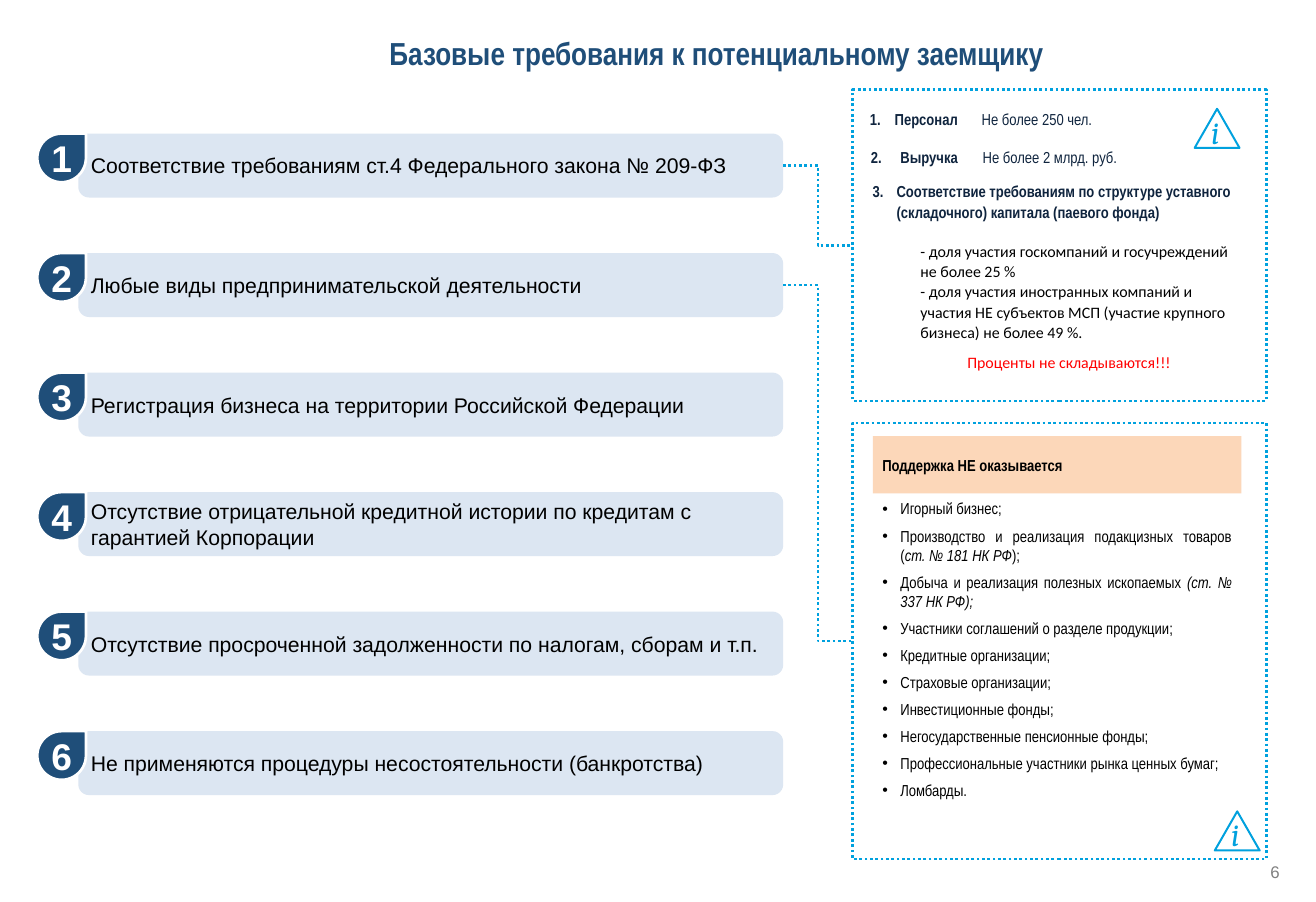
import pptx
import pptx.dml.color
import pptx.enum.dml
import pptx.enum.shapes
import pptx.enum.text
import pptx.util
import lxml.etree
from dataclasses import dataclass

KIND = pptx.enum.shapes.MSO_SHAPE
ALIGN = pptx.enum.text.PP_ALIGN
ANCHOR = pptx.enum.text.MSO_ANCHOR
NS = "{http://schemas.openxmlformats.org/drawingml/2006/main}"


@dataclass(frozen=True)
class Theme:
    navy: str = "1F4E79"
    dark: str = "0F243E"
    black: str = "000000"
    white: str = "FFFFFF"
    gray: str = "808080"
    red: str = "FF0000"
    cyan: str = "00A1DE"
    pale: str = "DCE6F2"
    peach: str = "FCD7B9"
    plain: str = "Arial"
    thin: str = "Arial Narrow"
    soft: str = "Calibri"
    serif: str = "Cambria"
    small: float = 12
    page: float = 12.7
    body: float = 16
    large: float = 24
    digit: float = 28


THEME = Theme()
WIDE, HIGH = pptx.util.Inches(13.78), pptx.util.Inches(9.45)

DEMANDS = [
    "Соответствие требованиям ст.4 Федерального закона № 209-ФЗ",
    "Любые виды предпринимательской деятельности",
    "Регистрация бизнеса на территории Российской Федерации",
    "Отсутствие отрицательной кредитной истории по кредитам с гарантией Корпорации",
    "Отсутствие просроченной задолженности по налогам, сборам и т.п.",
    "Не применяются процедуры несостоятельности (банкротства)",
]
LIMITS = [
    ("Персонал", "Не более 250 чел.", 65.38, 10.85, 0.26),
    ("Выручка", "Не более 2 млрд. руб.", 65.46, 15.13, 0.31),
]
SHARES = [
    "- доля участия госкомпаний и госучреждений не более 25 %",
    "- доля участия иностранных компаний и участия НЕ субъектов МСП "
    "(участие крупного бизнеса) не более 49 %.",
]
BANNED = [
    "Игорный бизнес;",
    "Производство и реализация подакцизных товаров (*ст. № 181 НК РФ*);",
    "Добыча и реализация полезных ископаемых *(ст. № 337 НК РФ);*",
    "Участники соглашений о разделе продукции;",
    "Кредитные организации;",
    "Страховые организации;",
    "Инвестиционные фонды;",
    "Негосударственные пенсионные фонды;",
    "Профессиональные участники рынка ценных бумаг;",
    "Ломбарды.",
]


def area(left, top, width, height):
    """Turn cells of a 100 by 100 grid over the slide into lengths."""
    return [int(cell * full / 100) for cell, full in
            zip((left, top, width, height), (WIDE, HIGH, WIDE, HIGH))]


def tint(name):
    return pptx.dml.color.RGBColor.from_string(name)


def stroke(line, color, width, dotted=False):
    line.color.rgb = tint(color)
    line.width = pptx.util.Pt(width)
    if dotted:
        line.dash_style = pptx.enum.dml.MSO_LINE.ROUND_DOT


def write(box, text, size=THEME.small, font=THEME.thin, color=THEME.black,
          bold=False, slant=False, align=ALIGN.LEFT, mark=None, indent=0,
          hang=0, before=0, after=0, pitch=None):
    """Add a paragraph; parts between asterisks are italic.

    A mark is a bullet sign, or the number a numbered list starts at.
    """
    frame = box.text_frame
    para = frame.paragraphs[0]
    if para.runs:
        para = frame.add_paragraph()
    props = para._p.get_or_add_pPr()
    props.set("marL", str(pptx.util.Inches(indent)))
    props.set("indent", str(-pptx.util.Inches(hang)))
    if isinstance(mark, int):
        lxml.etree.SubElement(props, NS + "buAutoNum", type="arabicPeriod",
                              startAt=str(mark))
    elif mark:
        lxml.etree.SubElement(props, NS + "buFont", typeface=THEME.plain)
        lxml.etree.SubElement(props, NS + "buChar", char=mark)
    para.alignment = align
    para.space_before = pptx.util.Pt(before)
    para.space_after = pptx.util.Pt(after)
    if pitch:
        para.line_spacing = pitch
    for spot, part in enumerate(text.split("*")):
        if part:
            run = para.add_run()
            run.text = part
            run.font.size = pptx.util.Pt(size)
            run.font.name = font
            run.font.bold = bold
            run.font.italic = slant or spot % 2 == 1
            run.font.color.rgb = tint(color)


def frame(box, anchor, inset=True, wrap=True):
    body = box.text_frame
    body.word_wrap = wrap
    body.vertical_anchor = anchor
    if not inset:
        body.margin_left = body.margin_right = 0
        body.margin_top = body.margin_bottom = 0


def label(slide, place, anchor=ANCHOR.MIDDLE, inset=True, wrap=True):
    box = slide.shapes.add_textbox(*area(*place))
    frame(box, anchor, inset, wrap)
    return box


def block(slide, kind, place, fill=None, edge=None, width=2, dotted=False,
          inset=True):
    box = slide.shapes.add_shape(kind, *area(*place))
    box.shadow.inherit = False
    if fill:
        box.fill.solid()
        box.fill.fore_color.rgb = tint(fill)
    else:
        box.fill.background()
    if edge:
        stroke(box.line, edge, width, dotted)
    else:
        box.line.fill.background()
    frame(box, ANCHOR.MIDDLE, inset)
    return box


def panel(slide, top, height):
    return block(slide, KIND.RECTANGLE, (64.8, top, 31.42, height),
                 edge=THEME.cyan, dotted=True)


def demand(slide, index, text):
    top = 14.81 + 13.25 * index
    bar = block(slide, KIND.ROUNDED_RECTANGLE, (5.95, top, 53.56, 7.09), THEME.pale)
    write(bar, text, THEME.body, THEME.plain)
    drop = block(slide, KIND.TEAR, (2.83, top, 3.7, 5.4), THEME.navy,
                 THEME.white, inset=False)
    write(drop, str(index + 1), THEME.digit, THEME.plain, THEME.white,
          bold=True, align=ALIGN.CENTER)
    return bar


def link(slide, start, end):
    """Join the right side of start to the left side of end."""
    line = slide.shapes.add_connector(
        pptx.enum.shapes.MSO_CONNECTOR.ELBOW, 0, 0, 0, 0)
    line.begin_connect(start, 3)
    line.end_connect(end, 1)
    stroke(line.line, THEME.cyan, 2, True)
    lxml.etree.SubElement(line._element.spPr, NS + "effectLst")


def info(slide, left, top):
    block(slide, KIND.ISOSCELES_TRIANGLE, (left, top, 3.41, 4.34),
          THEME.white, THEME.cyan, 1.5)
    sign = label(slide, (left + 0.51, top - 0.11, 2.1, 5.29), ANCHOR.TOP, wrap=False)
    write(sign, "i", THEME.large, THEME.serif, THEME.cyan, slant=True,
          align=ALIGN.CENTER)


def limits(slide):
    for row, (name, value, left, top, hang) in enumerate(LIMITS):
        write(label(slide, (left, top, 14.95, 4.66)), name, color=THEME.dark,
              bold=True, mark=row + 1, indent=hang, hang=hang)
        write(label(slide, (left + 8.5, top, 11.97, 4.66)), value, color=THEME.dark)
    box = label(slide, (65.6, 19.37, 29.9, 22), ANCHOR.TOP)
    write(box, "Соответствие требованиям по структуре уставного "
          "(складочного) капитала (паевого фонда)", color=THEME.dark,
          bold=True, mark=3, indent=0.25, hang=0.25, after=14, pitch=1.1)
    for row, text in enumerate(SHARES):
        write(box, text, font=THEME.soft, indent=0.5, after=8 * row, pitch=1.07)
    write(box, "Проценты не складываются!!!", font=THEME.soft,
          color=THEME.red, indent=0.99)


def banned(slide):
    head = block(slide, KIND.RECTANGLE, (66.33, 48.36, 28.01, 6.35), THEME.peach)
    write(head, "Поддержка НЕ оказывается", bold=True)
    box = label(slide, (66.33, 54.81, 28.01, 34.71), ANCHOR.TOP)
    for row, text in enumerate(BANNED):
        write(box, text, align=ALIGN.JUSTIFY, mark="•", indent=0.19,
              hang=0.19, before=6 if row else 0)


def main():
    deck = pptx.Presentation()
    deck.slide_width, deck.slide_height = WIDE, HIGH
    slide = deck.slides.add_slide(deck.slide_layouts[6])
    write(label(slide, (28.88, 1.8, 68.43, 8.04)),
          "Базовые требования к потенциальному заемщику",
          THEME.large, color=THEME.navy, bold=True)
    panels = [panel(slide, 9.95, 34.5), panel(slide, 46.88, 48.36)]
    bars = [demand(slide, index, text) for index, text in enumerate(DEMANDS)]
    for bar, side in zip(bars, panels):
        link(slide, bar, side)
    limits(slide)
    banned(slide)
    info(slide, 90.78, 12.06)
    info(slide, 92.31, 89.95)
    write(label(slide, (94.19, 95.56, 3.05, 2.12), ANCHOR.TOP, inset=False),
          "6", THEME.page, THEME.plain, THEME.gray, align=ALIGN.RIGHT)
    deck.save("out.pptx")


if __name__ == "__main__":
    main()
